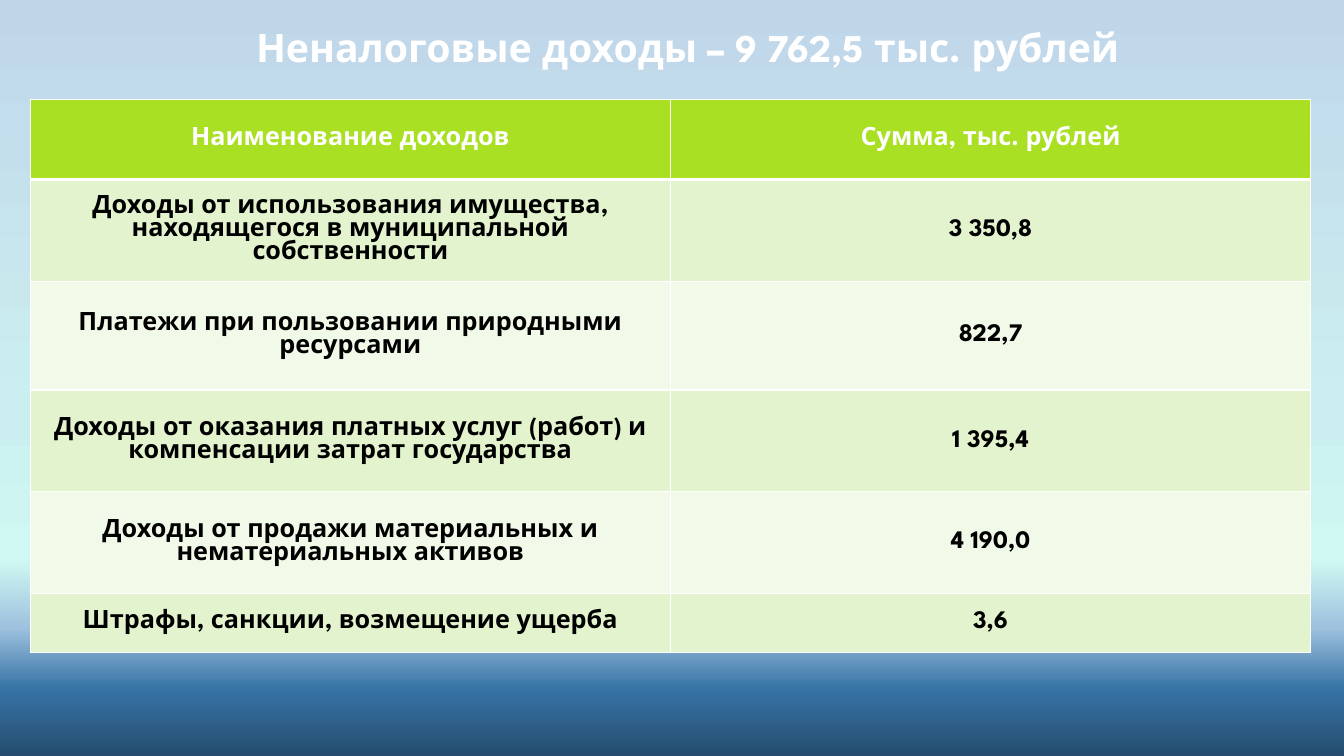
from typing import NamedTuple

from lxml.etree import SubElement
from pptx import Presentation
from pptx.dml.color import RGBColor
from pptx.enum.text import MSO_ANCHOR, PP_ALIGN
from pptx.oxml.ns import qn
from pptx.util import Inches, Pt

FONT = "League Spartan"
WHITE = RGBColor(0xFF, 0xFF, 0xFF)
BLACK = RGBColor(0x00, 0x00, 0x00)
LIME = RGBColor(0xA9, 0xE0, 0x23)
BANDS = (RGBColor(0xE2, 0xF3, 0xCD), RGBColor(0xF1, 0xF9, 0xE8))
SKY = (
    (0, RGBColor(0xBF, 0xD6, 0xE9)),
    (54, RGBColor(0xCB, 0xEF, 0xF0)),
    (74, RGBColor(0xCF, 0xF8, 0xF2)),
    (83, RGBColor(0x9F, 0xC2, 0xDF)),
    (91, RGBColor(0x38, 0x74, 0xA6)),
    (100, RGBColor(0x25, 0x4D, 0x6F)),
)


class Income(NamedTuple):
    name: str
    amount: str
    height: float


HEADER = Income("Наименование доходов", "Сумма, тыс. рублей", 0.79)
INCOMES = (
    Income("Доходы от использования имущества, находящегося в муниципальной собственности", "3 350,8", 1.01),
    Income("Платежи при пользовании природными ресурсами", "822,7", 1.08),
    Income("Доходы от оказания платных услуг (работ) и компенсации затрат государства", "1 395,4", 1.01),
    Income("Доходы от продажи материальных и нематериальных активов", "4 190,0", 1.01),
    Income("Штрафы, санкции, возмещение ущерба", "3,6", 0.58),
)


def paint_background(s) -> None:
    fill = s.background.fill
    fill.gradient()
    fill.gradient_angle = 270
    stops = s.background._cSld.find(".//" + qn("a:gsLst"))
    stops.clear()
    for percent, color in SKY:
        stop = SubElement(stops, qn("a:gs"), pos=str(percent * 1000))
        SubElement(stop, qn("a:srgbClr"), val=str(color))


def write(tf, text: str, size: int, color: RGBColor) -> None:
    tf.text = text
    p = tf.paragraphs[0]
    p.alignment = PP_ALIGN.CENTER
    p.font.name, p.font.size, p.font.bold = FONT, Pt(size), True
    p.font.color.rgb = color


def set_borders(cell, bottom: int) -> None:
    """Draw white cell borders; only the bottom width (points) varies."""
    tc_pr = cell._tc.get_or_add_tcPr()
    for i, (side, width) in enumerate((("L", 1), ("R", 1), ("T", 1), ("B", bottom))):
        line = tc_pr.makeelement(qn(f"a:ln{side}"), {"w": str(Pt(width))})
        fill = SubElement(line, qn("a:solidFill"))
        SubElement(fill, qn("a:srgbClr"), val=str(WHITE))
        tc_pr.insert(i, line)


def add_title(s, text: str) -> None:
    title = s.shapes.title
    title.left, title.top = Inches(2.2), Inches(0.18)
    title.width, title.height = Inches(9.24), Inches(0.57)
    tf = title.text_frame
    tf.vertical_anchor = MSO_ANCHOR.BOTTOM
    write(tf, text, 28, WHITE)


def add_income_table(s) -> None:
    rows = (HEADER, *INCOMES)
    height = sum(row.height for row in rows)
    table = s.shapes.add_table(
        len(rows), 2, Inches(0.3), Inches(0.99), Inches(12.7), Inches(height)
    ).table
    for i, row in enumerate(rows):
        table.rows[i].height = Inches(row.height)
        is_header = row is HEADER
        for j, text in enumerate((row.name, row.amount)):
            cell = table.cell(i, j)
            cell.vertical_anchor = MSO_ANCHOR.MIDDLE
            cell.fill.solid()
            cell.fill.fore_color.rgb = LIME if is_header else BANDS[(i - 1) % 2]
            write(cell.text_frame, text, 18, WHITE if is_header else BLACK)
            set_borders(cell, 3 if is_header else 1)


def main() -> None:
    prs = Presentation()
    prs.slide_width, prs.slide_height = Inches(13.33), Inches(7.5)
    s = prs.slides.add_slide(prs.slide_layouts.get_by_name("Title Only"))
    paint_background(s)
    add_title(s, "Неналоговые доходы – 9 762,5 тыс. рублей")
    add_income_table(s)
    prs.save("out.pptx")


if __name__ == "__main__":
    main()
